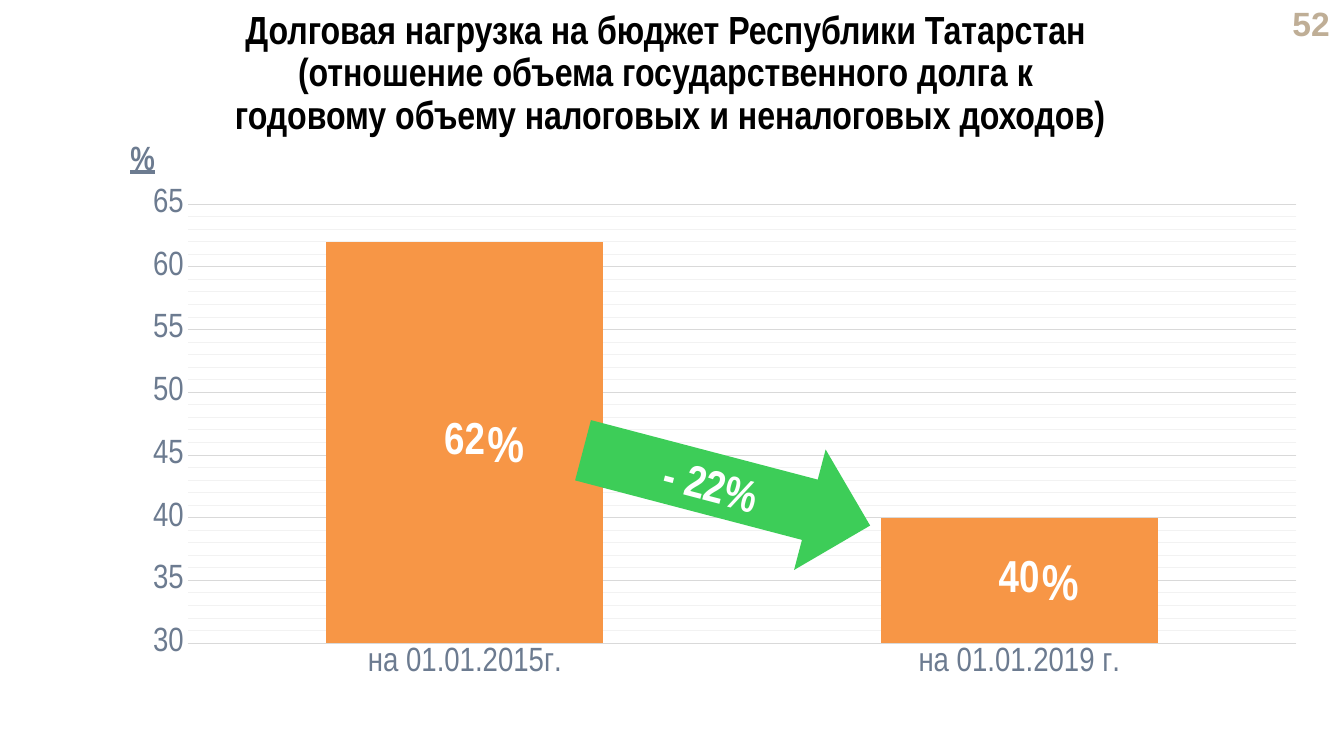
import copy

import pptx
import pptx.chart.data
import pptx.dml.color
import pptx.enum.chart
import pptx.enum.shapes
import pptx.enum.text
import pptx.util
from lxml import etree

Pt = pptx.util.Pt
ALIGN = pptx.enum.text.PP_ALIGN
ANCHOR = pptx.enum.text.MSO_ANCHOR
NARROW = "Arial Narrow"
SLATE = "6C7B90"
CHART_NS = "{http://schemas.openxmlformats.org/drawingml/2006/chart}"
DRAWING_NS = "{http://schemas.openxmlformats.org/drawingml/2006/main}"
DEBT_LOAD = {"на 01.01.2015г.": 62, "на 01.01.2019 г.": 40}
AXIS_MIN, AXIS_MAX = 30, 65
PLOT = {"x": 0.1, "y": 0.04, "w": 0.89, "h": 0.79}


def rgb(hex_colour):
    """Turn a hex string into a colour."""
    return pptx.dml.color.RGBColor.from_string(hex_colour)


def format_font(font, size, colour, name=NARROW, bold=False, underline=False):
    """Apply one look to a font."""
    font.size, font.name, font.bold, font.underline = Pt(size), name, bold, underline
    font.color.rgb = rgb(colour)


def write(shape, text, align=ALIGN.LEFT, anchor=ANCHOR.TOP, line_spacing=None, **look):
    """Put formatted text into a shape."""
    frame = shape.text_frame
    frame.word_wrap = True
    frame.auto_size = pptx.enum.text.MSO_AUTO_SIZE.NONE
    frame.vertical_anchor = anchor
    frame.text = text
    paragraph = frame.paragraphs[0]
    paragraph.alignment = align
    paragraph.space_before = Pt(0)
    if line_spacing:
        paragraph.line_spacing = line_spacing
    for run in paragraph.runs:
        format_font(run.font, **look)


def add_text(slide, box, text, **options):
    """Add a text box holding formatted text."""
    write(slide.shapes.add_textbox(*map(Pt, box)), text, **options)


def add_heading(slide, box):
    """Place the title and the page number at its right."""
    left, top, width, height = box
    title = slide.shapes.title
    title.left, title.top, title.width, title.height = map(Pt, box)
    heading = ("Долговая нагрузка на бюджет Республики Татарстан \v"
               "(отношение объема государственного долга к \v"
               "годовому объему налоговых и неналоговых доходов)")
    write(title, heading, align=ALIGN.CENTER, line_spacing=0.9,
          size=28, colour="000000", bold=True)
    add_text(slide, (left + width - 7, top, 61, 25), "52", align=ALIGN.RIGHT,
             anchor=ANCHOR.MIDDLE, size=24, colour="BFAE96", name="Arial", bold=True)


def format_axes(chart):
    """Set the scale, gridlines and labels of both axes."""
    categories, values = chart.category_axis, chart.value_axis
    for axis in (categories, values):
        axis.major_tick_mark = axis.minor_tick_mark = pptx.enum.chart.XL_TICK_MARK.NONE
        format_font(axis.tick_labels.font, 24, SLATE)
    values.minimum_scale, values.maximum_scale = AXIS_MIN, AXIS_MAX
    values.major_unit, values.minor_unit = 5, 1
    values.tick_labels.number_format = "0"
    values.tick_labels.number_format_is_linked = False
    values.has_major_gridlines = values.has_minor_gridlines = True
    values.format.line.fill.background()
    for line in (categories.format.line, values.major_gridlines.format.line):
        line.width = Pt(0.75)
        line.color.rgb = rgb("D9D9D9")

    major_grid = chart.element.find(f".//{CHART_NS}majorGridlines")
    minor_grid = chart.element.find(f".//{CHART_NS}minorGridlines")
    minor_style = copy.deepcopy(major_grid[0])
    minor_style.find(f".//{DRAWING_NS}srgbClr").set("val", "F2F2F2")
    minor_grid.append(minor_style)


def fix_plot_area(chart):
    """Pin the inner plot area to its share of the chart."""
    plot_area = chart.element.find(f".//{CHART_NS}plotArea")
    for automatic_layout in plot_area.findall(f"{CHART_NS}layout"):
        plot_area.remove(automatic_layout)
    layout = etree.Element(f"{CHART_NS}layout")
    manual = etree.SubElement(layout, f"{CHART_NS}manualLayout")
    settings = {"layoutTarget": "inner", "xMode": "edge", "yMode": "edge", **PLOT}
    for tag, value in settings.items():
        etree.SubElement(manual, f"{CHART_NS}{tag}").set("val", str(value))
    plot_area.insert(0, layout)


def add_debt_chart(slide, box):
    """Place the column chart with its unit and percent signs."""
    left, top, width, height = box
    data = pptx.chart.data.CategoryChartData(number_format="0")
    data.categories = list(DEBT_LOAD)
    data.add_series("Series 1", list(DEBT_LOAD.values()))
    chart = slide.shapes.add_chart(
        pptx.enum.chart.XL_CHART_TYPE.COLUMN_STACKED, *map(Pt, box), data).chart
    chart.has_legend = chart.has_title = False
    format_font(chart.font, 10, "000000", name="Calibri")
    format_axes(chart)
    fix_plot_area(chart)

    columns = chart.plots[0]
    columns.gap_width = columns.overlap = 100
    columns.vary_by_categories = False
    fill = columns.series[0].format.fill
    fill.solid()
    fill.fore_color.rgb = rgb("F79646")
    labels = columns.series[0].data_labels
    labels.show_value = True
    labels.number_format, labels.number_format_is_linked = "0", False
    labels.position = pptx.enum.chart.XL_LABEL_POSITION.CENTER
    format_font(labels.font, 32, "FFFFFF", bold=True)

    add_text(slide, (left + 41, top - 36, 113, 36), "%",
             size=24, colour=SLATE, bold=True, underline=True)
    for index, value in enumerate(DEBT_LOAD.values()):
        column_x = left + width * (PLOT["x"] + PLOT["w"] * (index + 0.5) / len(DEBT_LOAD))
        depth = (AXIS_MAX - (value + AXIS_MIN) / 2) / (AXIS_MAX - AXIS_MIN)
        column_y = top + height * (PLOT["y"] + PLOT["h"] * depth)
        add_text(slide, (column_x + 9, column_y - 25, 32, 51), "%",
                 size=36, colour="FFFFFF", bold=True)


def add_decline_arrow(slide, box):
    """Place the tilted arrow with the size of the decline."""
    arrow = slide.shapes.add_shape(
        pptx.enum.shapes.MSO_SHAPE.RIGHT_ARROW, *map(Pt, box))
    arrow.rotation = 14.7
    arrow.shadow.inherit = False
    arrow.fill.solid()
    arrow.fill.fore_color.rgb = rgb("3DCD58")
    arrow.line.fill.background()
    write(arrow, "- 22%", align=ALIGN.CENTER, anchor=ANCHOR.MIDDLE,
          size=32, colour="FFFFFF", bold=True)


def main():
    """Build and save the slide."""
    deck = pptx.Presentation()
    deck.slide_width, deck.slide_height = Pt(960), Pt(540)
    slide = deck.slides.add_slide(deck.slide_layouts[5])
    add_heading(slide, (54, 4, 849, 45))
    add_debt_chart(slide, (45, 130, 890, 397))
    add_decline_arrow(slide, (413, 304, 212, 89))
    deck.save("out.pptx")


if __name__ == "__main__":
    main()
